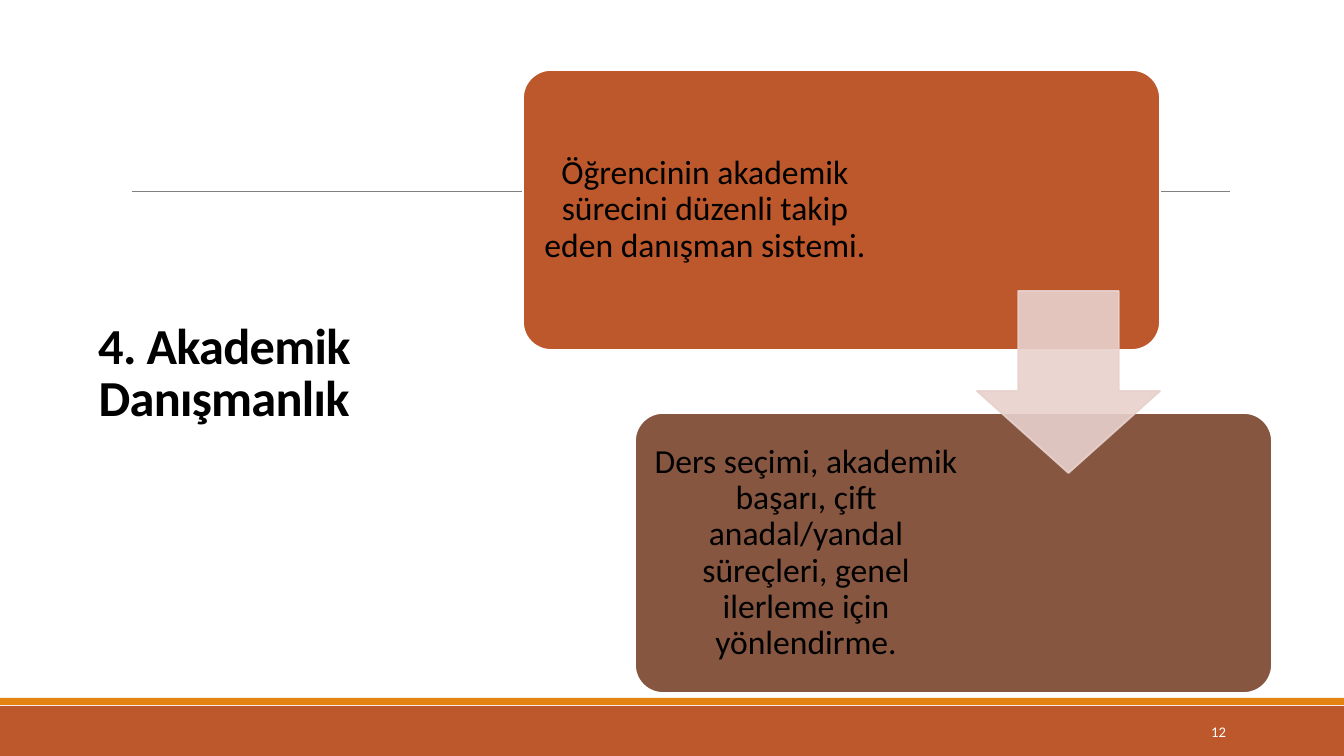
from lxml import etree
from pptx import Presentation
from pptx import util as u
from pptx.dml.color import RGBColor
from pptx.enum import shapes, text
from pptx.oxml.ns import qn

EMU_PER_PX = 12192000 / 1344


def px(n):
    return u.Emu(round(n * EMU_PER_PX))


def paint(color, hex_value):
    color.rgb = RGBColor.from_string(hex_value)


class Deck:
    font = "Calibri"
    black, white = "000000", "FFFFFF"
    rust, orange, brown, blush, gray = "BD582C", "E48312", "865640", "E8D1CD", "808080"

    def __init__(self):
        self.prs = Presentation()
        self.prs.slide_width, self.prs.slide_height = px(1344), px(756)
        self.s = self.prs.slides.add_slide(self.prs.slide_layouts[5])

    def set_text(self, sp, words, size, color, align, spacing=1.0, bold=False):
        tf = sp.text_frame
        tf.text = words
        tf.word_wrap = True
        tf.auto_size = text.MSO_AUTO_SIZE.NONE
        tf.vertical_anchor = text.MSO_ANCHOR.MIDDLE
        tf.margin_left = tf.margin_right = px(10)
        tf.margin_top = tf.margin_bottom = px(10)
        p = tf.paragraphs[0]
        p.alignment, p.line_spacing = align, spacing
        p.font.name, p.font.size, p.font.bold = self.font, u.Pt(size), bold
        paint(p.font.color, color)
        return p

    def title(self, words, x, y, w, h):
        sp = self.s.shapes.title
        sp.left, sp.top, sp.width, sp.height = map(px, (x, y, w, h))
        p = self.set_text(sp, words, 36, self.black, text.PP_ALIGN.CENTER, 0.85, True)
        p.runs[0]._r.get_or_add_rPr().set("spc", "-50")

    def label(self, words, x, y, w, h, size=24, color=black,
              align=text.PP_ALIGN.CENTER, spacing=0.9):
        sp = self.s.shapes.add_textbox(*map(px, (x, y, w, h)))
        self.set_text(sp, words, size, color, align, spacing)

    def shape(self, kind, x, y, w, h, fill, line=None, alpha=100, adj=()):
        sp = self.s.shapes.add_shape(kind, *map(px, (x, y, w, h)))
        sp.shadow.inherit = False
        sp.fill.solid()
        paint(sp.fill.fore_color, fill)
        if line:
            sp.line.width = u.Pt(1.25)
            paint(sp.line.color, line)
        else:
            sp.line.fill.background()
        if alpha < 100:
            for clr in sp._element.spPr.iter(qn("a:srgbClr")):
                etree.SubElement(clr, qn("a:alpha"), val=str(alpha * 1000))
        for i, value in enumerate(adj):
            sp.adjustments[i] = value

    def rule(self, x1, x2, y):
        cx = self.s.shapes.add_connector(
            shapes.MSO_CONNECTOR.STRAIGHT, px(x1), px(y), px(x2), px(y))
        cx.line.width = u.Pt(0.5)
        paint(cx.line.color, self.gray)
        etree.SubElement(cx._element.spPr, qn("a:effectLst"))

    def step(self, words, x, y, fill, text_width):
        self.shape(shapes.MSO_SHAPE.ROUNDED_RECTANGLE, x, y, 637, 280,
                   fill, self.white, adj=(0.1,))
        self.label(words, x + 8, y + 8, text_width, 264)


def main():
    d = Deck()
    d.shape(shapes.MSO_SHAPE.RECTANGLE, 0, 706, 1344, 50, d.rust)
    d.shape(shapes.MSO_SHAPE.RECTANGLE, 0, 698, 1344, 7, d.orange)
    d.rule(132, 1230, 191)
    d.title("4. Akademik Danışmanlık", 54, 57, 340, 636)

    steps = [
        ("Öğrencinin akademik sürecini düzenli takip eden danışman sistemi.", d.rust, 348),
        ("Ders seçimi, akademik başarı, çift anadal/yandal süreçleri, "
         "genel ilerleme için yönlendirme.", d.brown, 326),
    ]
    for i, (words, fill, text_width) in enumerate(steps):
        d.step(words, 523 + 112 * i, 70 + 343 * i, fill, text_width)

    d.shape(shapes.MSO_SHAPE.DOWN_ARROW, 977, 291, 183, 182,
            d.blush, d.blush, alpha=90, adj=(0.55, 0.45))
    d.label("12", 1092, 712, 144, 40, 10.5, d.white, text.PP_ALIGN.RIGHT, 1.0)
    d.prs.save("out.pptx")


if __name__ == "__main__":
    main()
